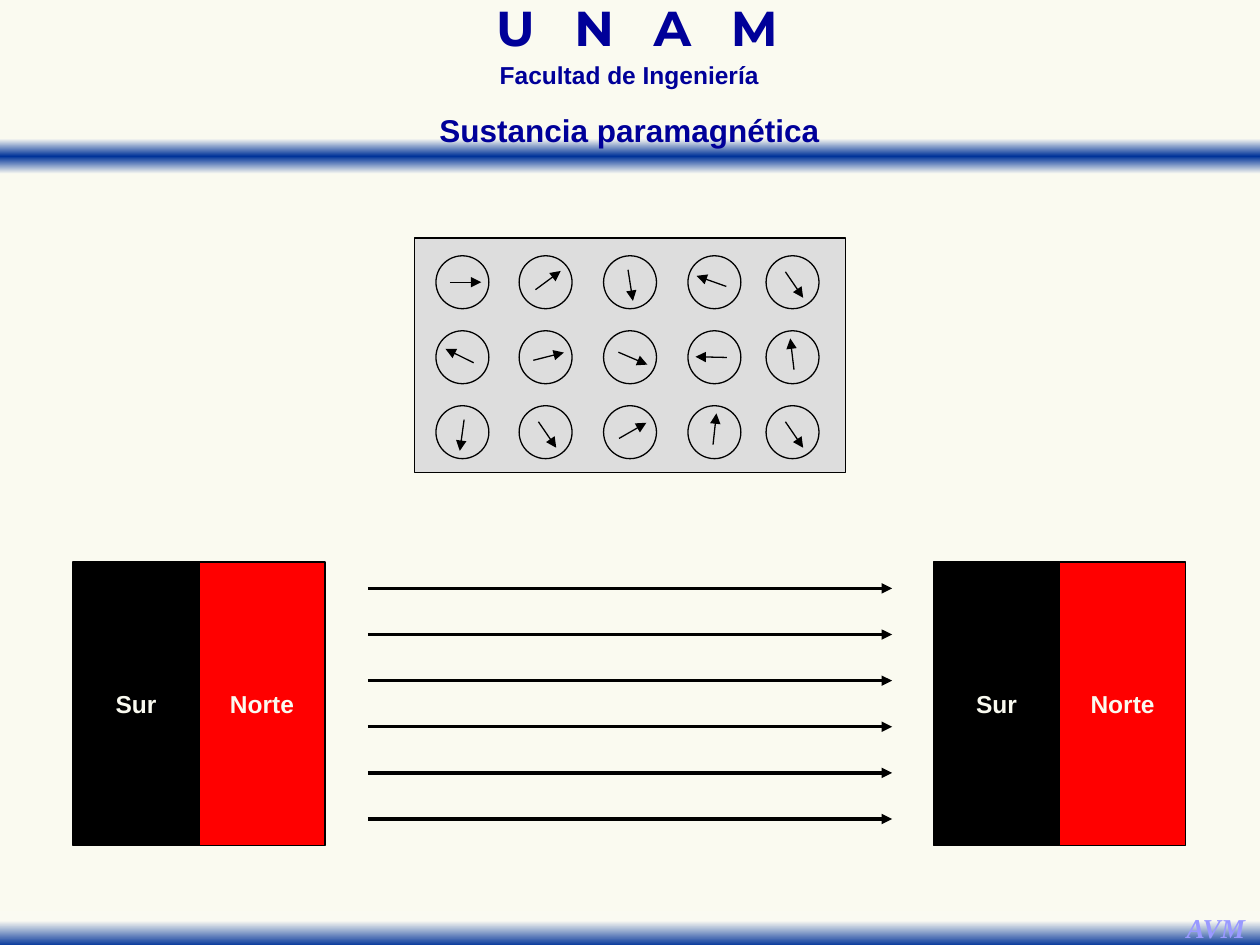
from math import cos, radians, sin

from lxml.etree import SubElement
from pptx import Presentation
from pptx.dml.color import RGBColor
from pptx.enum.shapes import MSO_CONNECTOR, MSO_SHAPE
from pptx.enum.text import MSO_ANCHOR, MSO_AUTO_SIZE, PP_ALIGN
from pptx.oxml.ns import qn
from pptx.util import Inches, Pt

CREAM, NAVY, BAND_BLUE, BLACK = "FAFAF0", "000099", "003399", "000000"
BAND_EDGE, GRAY, RED, LILAC = "FAFAF2", "DDDDDD", "FF0000", "9999FF"

# Clockwise direction of each magnetic dipole, in degrees
DIPOLE_ANGLES = [
    [0, 323.5, 81, 199.6, 55.6],
    [206.3, 345.8, 23.2, 181.2, 263.2],
    [97.9, 55.6, 330.1, 276.2, 55.6],
]
DIPOLE_COLUMNS = [3.67, 4.33, 5, 5.67, 6.29]


def color(value):
    return RGBColor.from_string(value)


def write(sp, text, size=14, font="Arial", fill=NAVY, italic=False,
          anchor=MSO_ANCHOR.TOP, wrap=True, line_spacing=None, tracking=None):
    """Put one bold, centred paragraph in a shape; tracking is in points."""
    tf = sp.text_frame
    tf.word_wrap = wrap
    tf.auto_size = MSO_AUTO_SIZE.NONE
    tf.vertical_anchor = anchor
    p = tf.paragraphs[0]
    p.alignment = PP_ALIGN.CENTER
    p.space_before = Pt(0)
    if line_spacing:
        p.line_spacing = line_spacing
    r = p.add_run()
    r.text = text
    r.font.name = font
    r.font.size = Pt(size)
    r.font.bold = True
    r.font.italic = italic
    r.font.color.rgb = color(fill)
    if tracking:
        r.font._element.set("spc", str(int(tracking * 100)))


def add_text(slide, x, y, w, h, text, **fmt):
    sp = slide.shapes.add_textbox(Inches(x), Inches(y), Inches(w), Inches(h))
    write(sp, text, **fmt)


def add_filled(slide, kind, x, y, w, h, fill):
    sp = slide.shapes.add_shape(kind, Inches(x), Inches(y), Inches(w), Inches(h))
    sp.shadow.inherit = False
    sp.fill.solid()
    sp.fill.fore_color.rgb = color(fill)
    sp.line.color.rgb = color(BLACK)
    sp.line.width = Pt(0.75)
    return sp


def add_band(slide, y, stops):
    """Full-width vertical gradient; stops are (percent, colour) pairs."""
    sp = slide.shapes.add_shape(MSO_SHAPE.RECTANGLE, 0, Inches(y), Inches(10), Inches(0.28))
    sp.shadow.inherit = False
    sp.line.fill.background()
    sp.fill.gradient()
    sp.fill.gradient_angle = 270
    stop_list = sp._element.spPr.find(".//" + qn("a:gsLst"))
    for stop in list(stop_list):
        stop_list.remove(stop)
    for percent, value in stops:
        stop = SubElement(stop_list, qn("a:gs"), pos=str(percent * 1000))
        SubElement(stop, qn("a:srgbClr"), val=value)


def add_arrow(slide, x1, y1, x2, y2, width):
    line = slide.shapes.add_connector(
        MSO_CONNECTOR.STRAIGHT, Inches(x1), Inches(y1), Inches(x2), Inches(y2))
    line.line.color.rgb = color(BLACK)
    line.line.width = Pt(width)
    SubElement(line.line._get_or_add_ln(), qn("a:tailEnd"), type="triangle")
    SubElement(line._element.spPr, qn("a:effectLst"))


def add_magnet(slide, x):
    for i, (pole, fill) in enumerate([("Sur", BLACK), ("Norte", RED)]):
        sp = add_filled(slide, MSO_SHAPE.RECTANGLE, x + i, 4.46, 1, 2.25, fill)
        write(sp, pole, fill=CREAM, anchor=MSO_ANCHOR.MIDDLE)


def add_dipole(slide, cx, cy, angle):
    radius, behind, ahead = 0.21, 0.1, 0.15
    add_filled(slide, MSO_SHAPE.OVAL, cx - radius, cy - radius, 2 * radius, 2 * radius, GRAY)
    dx, dy = cos(radians(angle)), sin(radians(angle))
    add_arrow(slide, cx - behind * dx, cy - behind * dy,
              cx + ahead * dx, cy + ahead * dy, 0.75)


def add_substance(slide):
    add_filled(slide, MSO_SHAPE.RECTANGLE, 3.29, 1.89, 3.42, 1.86, GRAY)
    for row, angles in enumerate(DIPOLE_ANGLES):
        for cx, angle in zip(DIPOLE_COLUMNS, angles):
            add_dipole(slide, cx, 2.24 + 0.595 * row, angle)


def add_title(slide, text):
    title = slide.shapes.title
    title.left, title.top = Inches(2.83), Inches(0.83)
    title.width, title.height = Inches(4.33), Inches(0.4)
    write(title, text, size=18)
    # The title overlaps the band, so it goes to the front
    slide.shapes._spTree.append(title._element)


def main():
    prs = Presentation()
    prs.slide_width, prs.slide_height = Inches(10), Inches(7.5)
    slide = prs.slides.add_slide(prs.slide_layouts[5])
    slide.background.fill.solid()
    slide.background.fill.fore_color.rgb = color(CREAM)

    add_band(slide, 1.1, [(0, BAND_EDGE), (50, BAND_BLUE), (100, BAND_EDGE)])
    add_text(slide, 3.1, 0.06, 3.91, 0.43, "U N A M", size=28, font="Montserrat",
             line_spacing=0.7, tracking=7.4)
    add_text(slide, 3.21, 0.49, 3.57, 0.27, "Facultad de Ingeniería", line_spacing=0.7)
    add_band(slide, 7.23, [(28, BAND_EDGE), (100, BAND_BLUE)])
    add_text(slide, 9.31, 7.18, 0.68, 0.37, "AVM", size=15.6, font="Times New Roman",
             fill=LILAC, italic=True, wrap=False)

    for x in (0.58, 7.41):
        add_magnet(slide, x)
    for i in range(6):
        y = 4.67 + 0.366 * i
        add_arrow(slide, 2.92, y, 7.08, y, 2)
    add_substance(slide)
    add_title(slide, "Sustancia paramagnética")
    prs.save("out.pptx")


if __name__ == "__main__":
    main()
